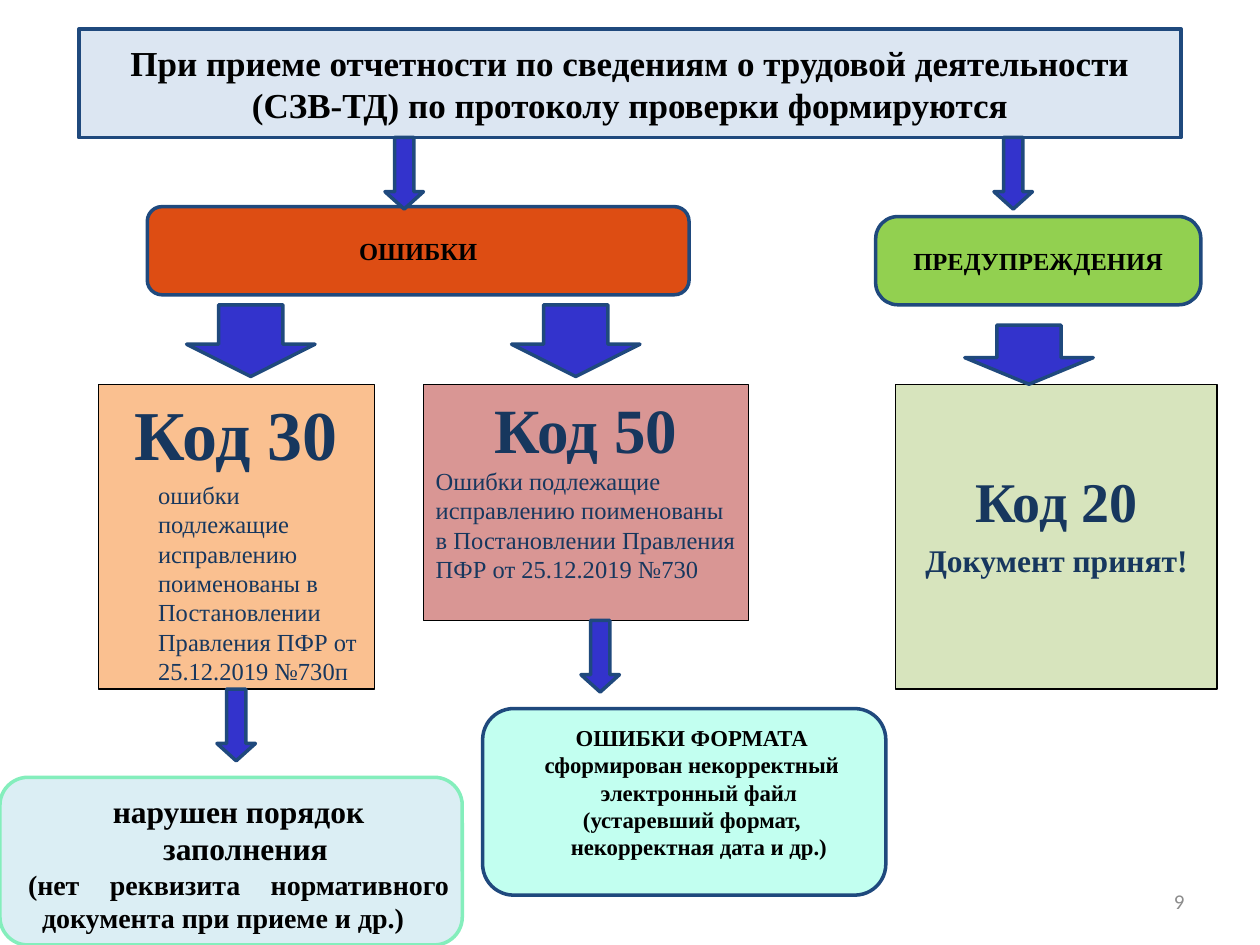
"""Build the slide on report-check outcomes: errors, warnings and their codes."""
from pptx import Presentation
from pptx import util as u
from pptx.dml.color import RGBColor
from pptx.enum import shapes, text

SERIF = "Times New Roman"
BLACK = RGBColor(0x00, 0x00, 0x00)
NAVY = RGBColor(0x17, 0x37, 0x5E)
OUTLINE = RGBColor(0x1F, 0x49, 0x7D)
ARROW = RGBColor(0x33, 0x33, 0xCC)
PALE_BLUE = RGBColor(0xDC, 0xE6, 0xF2)
RED = RGBColor(0xDD, 0x4D, 0x13)
GREEN = RGBColor(0x92, 0xD0, 0x50)
ORANGE = RGBColor(0xFA, 0xC0, 0x90)
ROSE = RGBColor(0xD9, 0x96, 0x94)
OLIVE = RGBColor(0xD7, 0xE4, 0xBD)
ICE = RGBColor(0xDB, 0xEE, 0xF4)
MINT = RGBColor(0xC2, 0xFF, 0xF0)
MINT_LINE = RGBColor(0x84, 0xEE, 0xBC)
GREY = RGBColor(0x8C, 0x8C, 0x8C)

RECTANGLE = shapes.MSO_SHAPE.RECTANGLE
ROUNDED = shapes.MSO_SHAPE.ROUNDED_RECTANGLE
TOP = text.MSO_ANCHOR.TOP
MIDDLE = text.MSO_ANCHOR.MIDDLE
LEFT = text.PP_ALIGN.LEFT
CENTER = text.PP_ALIGN.CENTER
RIGHT = text.PP_ALIGN.RIGHT
JUSTIFY = text.PP_ALIGN.JUSTIFY


def add_shape(slide, kind, frame, fill, line, width):
    shape = slide.shapes.add_shape(kind, *map(u.Pt, frame))
    shape.shadow.inherit = False
    shape.fill.solid()
    shape.fill.fore_color.rgb = fill
    shape.line.color.rgb = line
    shape.line.width = u.Pt(width)
    return shape


def prepare_text(shape, anchor, side=7.2, top=3.6):
    frame = shape.text_frame
    frame.word_wrap = True
    frame.vertical_anchor = anchor
    frame.margin_left = frame.margin_right = u.Pt(side)
    frame.margin_top, frame.margin_bottom = u.Pt(top), u.Pt(3.6)
    return frame


def write(frame, lines, color, font=SERIF, margin=0, indent=0):
    """Fill a frame with (text, size, bold, alignment) lines."""
    frame.text = "\n".join(line[0] for line in lines)
    for paragraph, (_, size, bold, alignment) in zip(frame.paragraphs, lines):
        paragraph.alignment = alignment
        properties = paragraph._p.get_or_add_pPr()
        properties.set("marL", str(u.Pt(margin)))
        properties.set("indent", str(u.Pt(indent)))
        for run in paragraph.runs:
            run.font.name = font
            run.font.size = u.Pt(size)
            run.font.bold = bold
            run.font.color.rgb = color


def add_heading(slide, kind, frame, fill, label, size=14):
    shape = add_shape(slide, kind, frame, fill, OUTLINE, 2)
    write(prepare_text(shape, MIDDLE), [(label, size, True, CENTER)], BLACK)
    return shape


def add_code(slide, frame, fill, lines, top=3.6, gap=0, margin=0):
    shape = add_shape(slide, RECTANGLE, frame, fill, BLACK, 0.75)
    text_frame = prepare_text(shape, TOP, top=top)
    write(text_frame, lines, NAVY)
    detail = text_frame.paragraphs[1]
    detail.space_before = u.Pt(gap)
    detail._p.get_or_add_pPr().set("marL", str(u.Pt(margin)))


def add_note(slide, frame, fill, line, lines):
    shape = add_shape(slide, ROUNDED, frame, fill, line, 2)
    write(prepare_text(shape, TOP, side=2.9), lines, BLACK, margin=16.5, indent=-8)


def add_arrow(slide, center, top, width=22, height=41):
    frame = (center - width / 2, top, width, height)
    arrow = add_shape(slide, shapes.MSO_SHAPE.DOWN_ARROW, frame, ARROW, OUTLINE, 2)
    arrow.adjustments[1] = 0.45


def add_page_number(slide, frame, number):
    box = slide.shapes.add_textbox(*map(u.Pt, frame))
    write(prepare_text(box, MIDDLE), [(number, 12, False, RIGHT)], GREY, "Calibri")


def main():
    presentation = Presentation()
    presentation.slide_width, presentation.slide_height = u.Pt(720), u.Pt(540)
    slide = presentation.slides.add_slide(presentation.slide_layouts[6])

    add_page_number(slide, (516.2, 500.4, 167.8, 28.8), "9")
    add_heading(slide, RECTANGLE, (45, 16.6, 630, 62), PALE_BLUE,
                "При приеме отчетности по сведениям о трудовой деятельности "
                "(СЗВ-ТД) по протоколу проверки формируются", 20)
    add_heading(slide, ROUNDED, (84.2, 118.1, 309.6, 50.4), RED, "ОШИБКИ")
    warning = add_heading(slide, ROUNDED, (500.4, 123.8, 185.8, 50.4), GREEN,
                          "ПРЕДУПРЕЖДЕНИЯ")
    warning.adjustments[0] = 0.25

    add_code(slide, (56.2, 219.6, 157.7, 174.2), ORANGE, [
        ("Код 30", 40, True, CENTER),
        ("ошибки подлежащие исправлению поименованы в Постановлении "
         "Правления ПФР от 25.12.2019 №730п", 14, False, LEFT),
    ], gap=3, margin=27)
    add_code(slide, (241.9, 219.6, 185.8, 135.2), ROSE, [
        ("Код 50", 36, True, CENTER),
        ("Ошибки подлежащие исправлению поименованы в Постановлении "
         "Правления ПФР от 25.12.2019 №730", 14, False, LEFT),
    ])
    add_code(slide, (511.9, 219.6, 183.6, 174.2), OLIVE, [
        ("Код 20", 32, True, CENTER),
        ("Документ принят!", 18, True, CENTER),
    ], top=47, gap=4)

    for center, top in ((231, 78.5), (579, 78.5), (135, 393.8), (343, 354.5)):
        add_arrow(slide, center, top)
    for center, top, height in ((143.3, 174.2, 41), (329, 174.2, 41), (588, 185.8, 33.8)):
        add_arrow(slide, center, top, 73.4, height)

    add_note(slide, (0, 444.2, 264.2, 95.8), ICE, MINT_LINE, [
        ("нарушен порядок заполнения", 18, True, CENTER),
        ("(нет реквизита нормативного документа при приеме и др.)", 16, True, JUSTIFY),
    ])
    add_note(slide, (275.8, 404.9, 230.4, 106.6), MINT, OUTLINE, [
        ("ОШИБКИ ФОРМАТА", 13, True, CENTER),
        ("сформирован некорректный электронный файл", 13, True, CENTER),
        ("(устаревший формат, некорректная дата и др.)", 13, True, CENTER),
    ])
    presentation.save("out.pptx")


if __name__ == "__main__":
    main()
